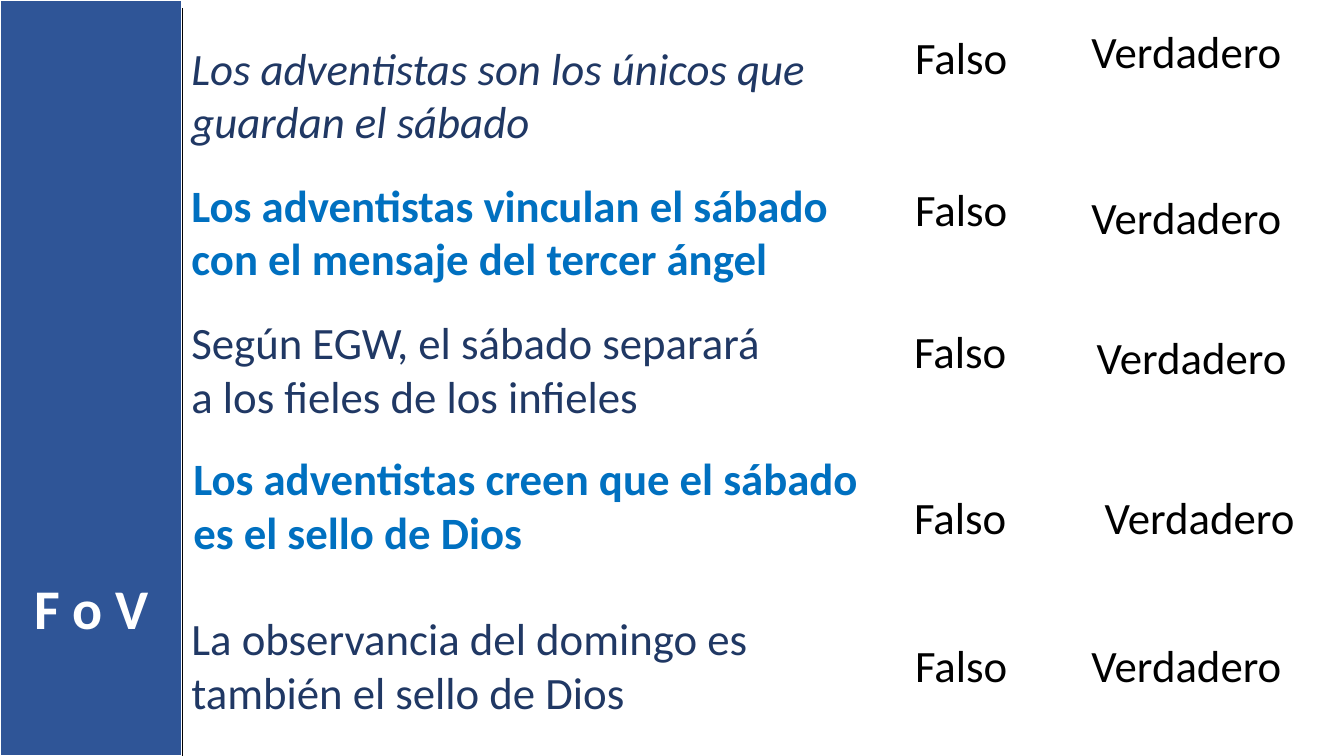
from dataclasses import dataclass, field
from typing import Any

import lxml.etree
import pptx
import pptx.dml.color
import pptx.enum.shapes
import pptx.enum.text
import pptx.oxml.ns
import pptx.util

RGBColor = pptx.dml.color.RGBColor
WHITE = RGBColor(0xFF, 0xFF, 0xFF)
BLACK = RGBColor(0x00, 0x00, 0x00)
BAND_BLUE = RGBColor(0x2F, 0x55, 0x97)
NAVY = RGBColor(0x20, 0x38, 0x64)
BRIGHT_BLUE = RGBColor(0x00, 0x70, 0xC0)

# The grid has square cells, ten to the inch.
CELL = pptx.util.Inches(0.1)
SLIDE_COLUMNS, SLIDE_ROWS = 133.33, 75
BAND_COLUMNS = 18.1
STATEMENT_ROWS, ANSWER_ROWS, TITLE_ROWS = 11.8, 6.4, 7.7


@dataclass(frozen=True)
class Box:
    column: float
    row: float
    columns: float
    rows: float

    def lengths(self) -> list[int]:
        return [cells(n) for n in (self.column, self.row, self.columns, self.rows)]


@dataclass(frozen=True)
class Answer:
    column: float
    row: float
    columns: float


@dataclass(frozen=True)
class Question:
    statement: str
    column: float
    row: float
    columns: float
    color: RGBColor
    false_answer: Answer
    true_answer: Answer
    emphasis: dict[str, Any] = field(default_factory=dict)


QUESTIONS = [
    Question("Los adventistas son los únicos que guardan el sábado",
             18, 3.5, 67, NAVY,
             Answer(89.8, 2.5, 17.5), Answer(107.3, 1.9, 22.7), {"italic": True}),
    Question("Los adventistas vinculan el sábado con el mensaje del tercer ángel",
             18, 17.1, 65.2, BRIGHT_BLUE,
             Answer(89.8, 17.5, 17.5), Answer(107.3, 18.3, 22.7), {"bold": True}),
    Question("Según EGW, el sábado separará a los fieles de los infieles",
             18, 30.7, 60.2, NAVY,
             Answer(89.7, 31.6, 12.3), Answer(107.8, 32.2, 21.1)),
    Question("Los adventistas creen que el sábado es el sello de Dios",
             18.2, 44.2, 69.7, BRIGHT_BLUE,
             Answer(89.7, 48.1, 12.3), Answer(108.6, 48.1, 21.4), {"bold": True}),
    Question("La observancia del domingo es también el sello de Dios",
             18, 60.1, 65.2, NAVY,
             Answer(89.8, 62.8, 17.5), Answer(107.3, 62.8, 22.7)),
]


def cells(count: float) -> int:
    """Length of a number of grid cells."""
    return round(count * CELL)


def add_text(slide: Any, text: str, box: Box, color: RGBColor, **formats: Any) -> Any:
    """Add a wrapped text box and return its paragraph."""
    frame = slide.shapes.add_textbox(*box.lengths()).text_frame
    frame.word_wrap = True
    frame.auto_size = pptx.enum.text.MSO_AUTO_SIZE.SHAPE_TO_FIT_TEXT
    paragraph = frame.paragraphs[0]
    run = paragraph.add_run()
    run.text = text
    font_format = {"name": "Calibri", "size": pptx.util.Pt(32)} | formats
    for name, value in font_format.items():
        setattr(run.font, name, value)
    run.font.color.rgb = color
    return paragraph


def add_band(slide: Any) -> None:
    band = slide.shapes.add_shape(
        pptx.enum.shapes.MSO_SHAPE.RECTANGLE,
        *Box(0, 0, BAND_COLUMNS, SLIDE_ROWS).lengths())
    band.shadow.inherit = False
    band.fill.solid()
    band.fill.fore_color.rgb = BAND_BLUE
    band.line.color.rgb = WHITE
    band.line.width = pptx.util.Pt(1.5)


def add_band_edge(slide: Any) -> None:
    edge = slide.shapes.add_connector(
        pptx.enum.shapes.MSO_CONNECTOR.STRAIGHT,
        cells(BAND_COLUMNS), cells(0.8), cells(BAND_COLUMNS), cells(SLIDE_ROWS))
    edge.line.color.rgb = BLACK
    edge.line.width = pptx.util.Pt(1)
    lxml.etree.SubElement(edge.element.spPr, pptx.oxml.ns.qn("a:effectLst"))


def add_question(slide: Any, question: Question) -> None:
    """Add a statement with its two answers."""
    box = Box(question.column, question.row, question.columns, STATEMENT_ROWS)
    add_text(slide, question.statement, box, question.color, **question.emphasis)
    answers = {"Falso": question.false_answer, "Verdadero": question.true_answer}
    for text, answer in answers.items():
        box = Box(answer.column, answer.row, answer.columns, ANSWER_ROWS)
        add_text(slide, text, box, BLACK)


def main() -> None:
    presentation = pptx.Presentation()
    presentation.slide_width = cells(SLIDE_COLUMNS)
    presentation.slide_height = cells(SLIDE_ROWS)
    slide = presentation.slides.add_slide(presentation.slide_layouts[6])
    add_band(slide)
    title = add_text(slide, "F o V", Box(0, 56.4, BAND_COLUMNS, TITLE_ROWS), WHITE,
                     size=pptx.util.Pt(40), bold=True)
    title.alignment = pptx.enum.text.PP_ALIGN.CENTER
    add_band_edge(slide)
    for question in QUESTIONS:
        add_question(slide, question)
    presentation.save("out.pptx")


if __name__ == "__main__":
    main()
